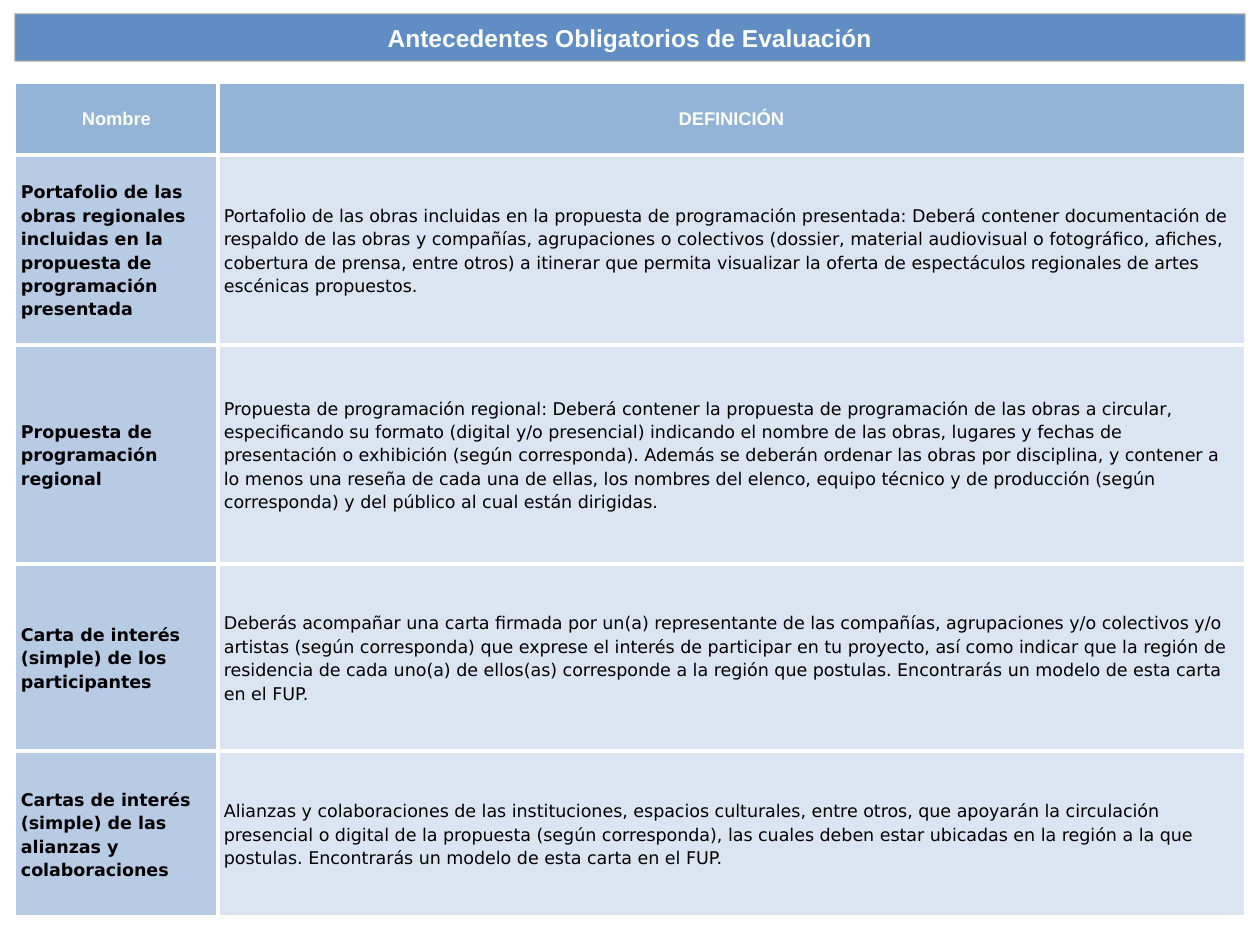
from dataclasses import dataclass

from lxml.etree import SubElement
from pptx import Presentation
from pptx.dml.color import RGBColor
from pptx.enum.text import MSO_ANCHOR, MSO_AUTO_SIZE, PP_ALIGN
from pptx.oxml import parse_xml
from pptx.oxml.ns import nsdecls, qn
from pptx.util import Emu, Pt

EMU_PER_PX = 914400 / 126
COLORS = {
    "banner": "4F81BD",
    "outline": "A5A5A5",
    "header": "93B3D7",
    "name": "B7CCE4",
    "definition": "DAE5F1",
    "white": "FFFFFF",
    "black": "000000",
}
LEFT, WIDTH = 15, 1230
COLUMN_WIDTHS = (203, 1027)
HEADER_HEIGHT = 72
HEADINGS = ("Nombre", "DEFINICIÓN")


@dataclass(frozen=True)
class Requirement:
    name: str
    definition: str
    height: int
    spacing: int = 8


@dataclass(frozen=True)
class CellStyle:
    fill: str
    color: str
    font: str
    size: float
    bold: bool
    align: PP_ALIGN
    spacing: int = 0
    line_spacing: float = 1.0


REQUIREMENTS = (
    Requirement(
        "Portafolio de las obras regionales incluidas en la propuesta de "
        "programación presentada",
        "Portafolio de las obras incluidas en la propuesta de programación "
        "presentada: Deberá contener documentación de respaldo de las obras y "
        "compañías, agrupaciones o colectivos (dossier, material audiovisual o "
        "fotográfico, afiches, cobertura de prensa, entre otros) a itinerar que "
        "permita visualizar la oferta de espectáculos regionales de artes "
        "escénicas propuestos.",
        190,
        12,
    ),
    Requirement(
        "Propuesta de programación regional",
        "Propuesta de programación regional: Deberá contener la propuesta de "
        "programación de las obras a circular, especificando su formato (digital "
        "y/o presencial) indicando el nombre de las obras, lugares y fechas de "
        "presentación o exhibición (según corresponda). Además se deberán ordenar "
        "las obras por disciplina, y contener a lo menos una reseña de cada una de "
        "ellas, los nombres del elenco, equipo técnico y de producción (según "
        "corresponda) y del público al cual están dirigidas.",
        219,
    ),
    Requirement(
        "Carta de interés (simple) de los participantes",
        "Deberás acompañar una carta firmada por un(a) representante de las "
        "compañías, agrupaciones y/o colectivos y/o artistas (según corresponda) "
        "que exprese el interés de participar en tu proyecto, así como indicar que "
        "la región de residencia de cada uno(a) de ellos(as) corresponde a la "
        "región que postulas. Encontrarás un modelo de esta carta en el FUP.",
        187,
    ),
    Requirement(
        "Cartas de interés (simple) de las alianzas y colaboraciones",
        "Alianzas y colaboraciones de las instituciones, espacios culturales, entre "
        "otros, que apoyarán la circulación presencial o digital de la propuesta "
        "(según corresponda), las cuales deben estar ubicadas en la región a la que "
        "postulas. Encontrarás un modelo de esta carta en el FUP.",
        166,
    ),
)


def px(length: int) -> Emu:
    return Emu(round(length * EMU_PER_PX))


def rgb(name: str) -> RGBColor:
    return RGBColor.from_string(COLORS[name])


def format_font(paragraph, font: str, size: float, color: str, bold: bool) -> None:
    for run in paragraph.runs:
        run.font.name = font
        run.font.size = Pt(size)
        run.font.bold = bold
        run.font.color.rgb = rgb(color)


def set_opacity(fill_parent, percent: int) -> None:
    color = fill_parent.find(qn("a:solidFill")).find(qn("a:srgbClr"))
    SubElement(color, qn("a:alpha")).set("val", str(percent * 1000))


def draw_banner(slide, text: str) -> None:
    banner = slide.shapes.title
    banner.left, banner.top = px(LEFT), px(14)
    banner.width, banner.height = px(WIDTH), px(47)
    banner.fill.solid()
    banner.fill.fore_color.rgb = rgb("banner")
    banner.line.color.rgb = rgb("outline")
    banner.line.width = Pt(0.75)
    set_opacity(banner.element.spPr, 90)
    set_opacity(banner.line._get_or_add_ln(), 90)
    frame = banner.text_frame
    frame.text = text
    frame.word_wrap = True
    frame.auto_size = MSO_AUTO_SIZE.NONE
    frame.vertical_anchor = MSO_ANCHOR.MIDDLE
    paragraph = frame.paragraphs[0]
    paragraph.alignment = PP_ALIGN.CENTER
    format_font(paragraph, "Arial", 14, "white", True)


def set_borders(cell, row: int, column: int) -> None:
    widths = {
        "lnL": 1 if column == 0 else 3,
        "lnR": 1 if column == len(COLUMN_WIDTHS) - 1 else 3,
        "lnT": 1 if row == 0 else 3,
        "lnB": 3,
    }
    properties = cell._tc.get_or_add_tcPr()
    for position, (side, points) in enumerate(widths.items()):
        border = parse_xml(
            f'<a:{side} {nsdecls("a")} w="{Pt(points)}"><a:solidFill>'
            f'<a:srgbClr val="{COLORS["white"]}"/></a:solidFill></a:{side}>'
        )
        properties.insert(position, border)


def fill_cell(cell, text: str, style: CellStyle) -> None:
    cell.text_frame.text = text
    cell.vertical_anchor = MSO_ANCHOR.MIDDLE
    cell.margin_left = cell.margin_right = px(6)
    cell.margin_top = cell.margin_bottom = px(6)
    cell.fill.solid()
    cell.fill.fore_color.rgb = rgb(style.fill)
    paragraph = cell.text_frame.paragraphs[0]
    paragraph.alignment = style.align
    paragraph.line_spacing = style.line_spacing
    paragraph.space_before = paragraph.space_after = Pt(style.spacing)
    format_font(paragraph, style.font, style.size, style.color, style.bold)


def body_style(fill: str, bold: bool, spacing: int) -> CellStyle:
    return CellStyle(
        fill, "black", "DejaVu Sans", 10, bold, PP_ALIGN.LEFT, spacing, 1.15
    )


def draw_requirements(slide) -> None:
    heights = [HEADER_HEIGHT] + [item.height for item in REQUIREMENTS]
    table = slide.shapes.add_table(
        len(heights), len(COLUMN_WIDTHS), px(LEFT), px(83), px(WIDTH), px(sum(heights))
    ).table
    for column, width in zip(table.columns, COLUMN_WIDTHS):
        column.width = px(width)
    for row, height in zip(table.rows, heights):
        row.height = px(height)
    heading_style = CellStyle("header", "white", "Arial", 10.5, True, PP_ALIGN.CENTER)
    for column, heading in enumerate(HEADINGS):
        fill_cell(table.cell(0, column), heading, heading_style)
    for row, item in enumerate(REQUIREMENTS, start=1):
        fill_cell(table.cell(row, 0), item.name, body_style("name", True, item.spacing))
        fill_cell(
            table.cell(row, 1),
            item.definition,
            body_style("definition", False, item.spacing),
        )
    for row in range(len(heights)):
        for column in range(len(COLUMN_WIDTHS)):
            set_borders(table.cell(row, column), row, column)


def main() -> None:
    presentation = Presentation()
    presentation.slide_width, presentation.slide_height = px(1260), px(945)
    slide = presentation.slides.add_slide(presentation.slide_layouts[5])
    draw_banner(slide, "Antecedentes Obligatorios de Evaluación")
    draw_requirements(slide)
    presentation.save("out.pptx")


if __name__ == "__main__":
    main()
